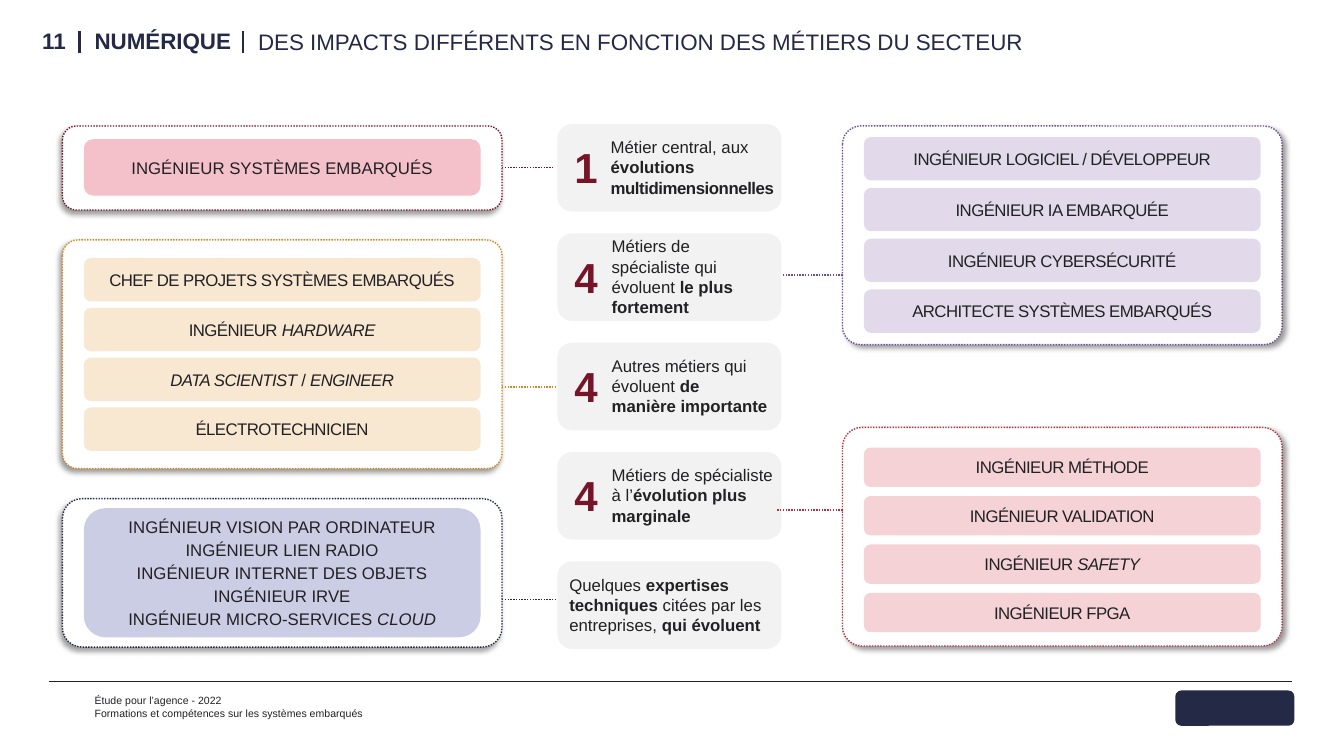
import pptx
import pptx.util
import pptx.oxml
import pptx.oxml.ns
import pptx.dml.color
import pptx.enum.dml
import pptx.enum.shapes
import pptx.enum.text

Pt = pptx.util.Pt
SHAPE = pptx.enum.shapes.MSO_SHAPE
ALIGN = pptx.enum.text.PP_ALIGN
ANCHOR = pptx.enum.text.MSO_ANCHOR

COLORS = {
    "navy": "242946", "ink": "212124", "wine": "761527", "gold": "D38622",
    "violet": "6D4E92", "red": "B72F3A", "white": "FFFFFF", "grey": "F2F2F2",
    "pink": "F4C0CA", "sand": "F8E7D1", "blue": "CACDE4", "lilac": "E2DAEB",
    "rose": "F4D2D5",
}

# Asterisks enclose emphasis: italic in bars, bold in cards.
FRAMES = [
    dict(left=44.6, top=90, high=60, round=10, line="wine", fill="pink",
         first=99.4, step=0, bar=40.3, tight=0, link=(395, 119.5),
         bars=["INGÉNIEUR SYSTÈMES EMBARQUÉS"]),
    dict(left=44.6, top=171.4, high=163.4, round=11, line="gold", fill="sand",
         first=184.3, step=35.6, bar=31, tight=-0.4, link=(398.2, 276.5),
         bars=["CHEF DE PROJETS SYSTÈMES EMBARQUÉS", "INGÉNIEUR *HARDWARE*",
               "*DATA SCIENTIST* / *ENGINEER*", "ÉLECTROTECHNICIEN"]),
    dict(left=44.6, top=356.2, high=106, round=14, line="navy", fill="blue",
         first=363, step=0, bar=92.2, tight=0, link=(398.2, 428.4),
         bars=["INGÉNIEUR VISION PAR ORDINATEUR\nINGÉNIEUR LIEN RADIO\n"
               "INGÉNIEUR INTERNET DES OBJETS\nINGÉNIEUR IRVE\n"
               "INGÉNIEUR MICRO-SERVICES *CLOUD*"]),
    dict(left=601.8, top=90, high=156.2, round=13, line="violet", fill="lilac",
         first=97.9, step=36.3, bar=31, tight=-0.4, link=(558.5, 196.5),
         bars=["INGÉNIEUR LOGICIEL / DÉVELOPPEUR", "INGÉNIEUR IA EMBARQUÉE",
               "INGÉNIEUR CYBERSÉCURITÉ", "ARCHITECTE SYSTÈMES EMBARQUÉS"]),
    dict(left=601.8, top=305.3, high=156.2, round=14, line="red", fill="rose",
         first=319.7, step=34.6, bar=28.1, tight=-0.4, link=(555, 364.3),
         bars=["INGÉNIEUR MÉTHODE", "INGÉNIEUR VALIDATION",
               "INGÉNIEUR *SAFETY*", "INGÉNIEUR FPGA"]),
]
# number, text, left, width, drop below card top, spacing of last run
CARDS = [
    ("1", "Métier central, aux *évolutions **multidimensionnelles*", 429.1, 140.4, 5.7, -0.3),
    ("4", "Métiers de spécialiste qui évoluent *le plus fortement*", 429.8, 126, -1.6, 0),
    ("4", "Autres métiers qui évoluent *de manière importante*", 429.8, 126, 5.7, 0),
    ("4", "Métiers de spécialiste à l’*évolution plus marginale*", 429.8, 129.6, 5.7, 0),
    ("", "Quelques *expertises techniques *citées par les entreprises, *qui évoluent*",
     399.6, 157.7, 5.7, 0),
]
CARD = dict(left=398.2, top=88.6, wide=160, high=62.6, step=78.1)
WIDE, INSET = 314, 15.3


def rgb(name):
    return pptx.dml.color.RGBColor.from_string(COLORS[name])


def tighten(run, gap):
    if gap:
        run._r.get_or_add_rPr().set("spc", str(round(gap * 100)))


def write(frame, text, size=12, color="ink", bold=False, mark="bold",
          align=ALIGN.LEFT, gap=0, before=0):
    """Fill a text frame; parts between asterisks get the mark style."""
    frame.word_wrap = True
    for n, line in enumerate(text.split("\n")):
        para = frame.paragraphs[0] if n == 0 else frame.add_paragraph()
        para.alignment, para.space_before = align, Pt(before)
        for k, part in enumerate(line.split("*")):
            if not part:
                continue
            run = para.add_run()
            run.text = part
            run.font.name, run.font.size = "Arial", Pt(size)
            run.font.color.rgb = rgb(color)
            run.font.bold = bold
            if k % 2:
                setattr(run.font, mark, True)
            tighten(run, gap)
    return frame


def label(left, top, wide, high, text, **style):
    box = slide.shapes.add_textbox(Pt(left), Pt(top), Pt(wide), Pt(high))
    return write(box.text_frame, text, **style)


def block(left, top, wide, high, fill, curve=None):
    """Add a rounded box without line or shadow."""
    box = slide.shapes.add_shape(SHAPE.ROUNDED_RECTANGLE,
                                 Pt(left), Pt(top), Pt(wide), Pt(high))
    box.shadow.inherit = False
    box.fill.solid()
    box.fill.fore_color.rgb = rgb(fill)
    box.line.fill.background()
    if curve:
        box.adjustments[0] = curve / high
    return box


def stroke(line, color, width, dots):
    line.color.rgb = rgb(color)
    line.width = Pt(width)
    if dots:
        line.dash_style = pptx.enum.dml.MSO_LINE.ROUND_DOT


def rule(x1, y1, x2, y2, color, width, dots=False):
    link = slide.shapes.add_connector(pptx.enum.shapes.MSO_CONNECTOR.STRAIGHT,
                                      Pt(x1), Pt(y1), Pt(x2), Pt(y2))
    stroke(link.line, color, width, dots)
    props = link._element.spPr
    props.append(props.makeelement(pptx.oxml.ns.qn("a:effectLst"), {}))


def shade(box, angle):
    """Give a box a soft outer shadow."""
    space = pptx.oxml.ns.nsdecls("a")
    box._element.spPr.find(pptx.oxml.ns.qn("a:effectLst")).append(pptx.oxml.parse_xml(
        f'<a:outerShdw {space} blurRad="{Pt(4)}" dist="{Pt(3)}" dir="{angle * 60000}" '
        'algn="t" rotWithShape="0"><a:srgbClr val="000000"><a:alpha val="40000"/>'
        '</a:srgbClr></a:outerShdw>'))


def draw_head():
    title = slide.shapes.title
    title.left, title.top, title.width, title.height = Pt(177.1), Pt(15.8), Pt(623.5), Pt(28.1)
    title.text_frame.auto_size = pptx.enum.text.MSO_AUTO_SIZE.NONE
    title.text_frame.vertical_anchor = ANCHOR.MIDDLE
    write(title.text_frame, "DES IMPACTS DIFFÉRENTS EN FONCTION DES MÉTIERS DU SECTEUR",
          size=16, color="navy")
    label(0, 15.8, 54, 28, "11", size=16, color="navy", bold=True, align=ALIGN.RIGHT)
    label(60.5, 15.5, 115, 28, "NUMÉRIQUE", size=16, color="navy", bold=True)
    for x in (56.9, 173.5):
        rule(x, 22.3, x, 38.2, "navy", 1.75)


def draw_foot():
    rule(35.3, 486.7, 923, 486.7, "ink", 0.5)
    label(60.5, 492.5, 550.8, 28.8, "Étude pour l’agence - 2022\n"
          "Formations et compétences sur les systèmes embarqués", size=7.5)
    block(839.5, 493.2, 85, 25.2, "navy")


def draw_frame(f):
    box = block(f["left"], f["top"], WIDE, f["high"], "white", f["round"])
    stroke(box.line, f["line"], 1, True)
    shade(box, 135 if f["left"] < CARD["left"] else 45)
    for n, text in enumerate(f["bars"]):
        bar = block(f["left"] + INSET, f["first"] + n * f["step"],
                    WIDE - 2 * INSET, f["bar"], f["fill"])
        bar.text_frame.vertical_anchor = ANCHOR.MIDDLE
        write(bar.text_frame, text, mark="italic", align=ALIGN.CENTER,
              gap=f["tight"], before=2 if "\n" in text else 0)


def draw_cards():
    for n, (mark, text, left, wide, drop, gap) in enumerate(CARDS):
        top = CARD["top"] + n * CARD["step"]
        block(CARD["left"], top, CARD["wide"], CARD["high"], "grey")
        if mark:
            label(403.2, top + 9.2, 32, 44, mark, size=30, color="wine", bold=True)
        body = label(left, top + drop, wide, 51, text)
        tighten(body.paragraphs[0].runs[-1], gap)


deck = pptx.Presentation()
deck.slide_width, deck.slide_height = Pt(960), Pt(540)
slide = deck.slides.add_slide(deck.slide_layouts[5])
draw_head()
draw_foot()
for f in FRAMES:
    draw_frame(f)
draw_cards()
for f in FRAMES:
    end, y = f["link"]
    start = f["left"] + (WIDE if f["left"] < end else 0)
    rule(start, y, end, y, f["line"], 1, True)
deck.save("out.pptx")
